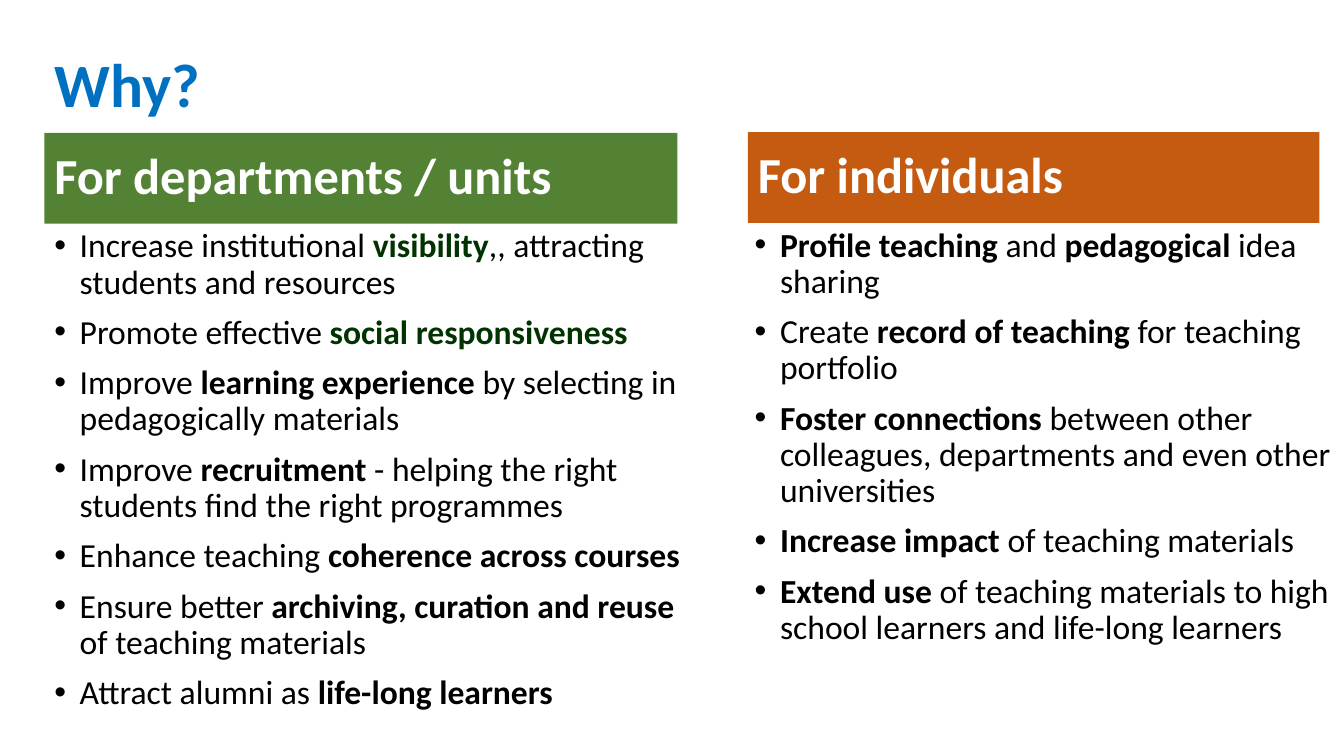
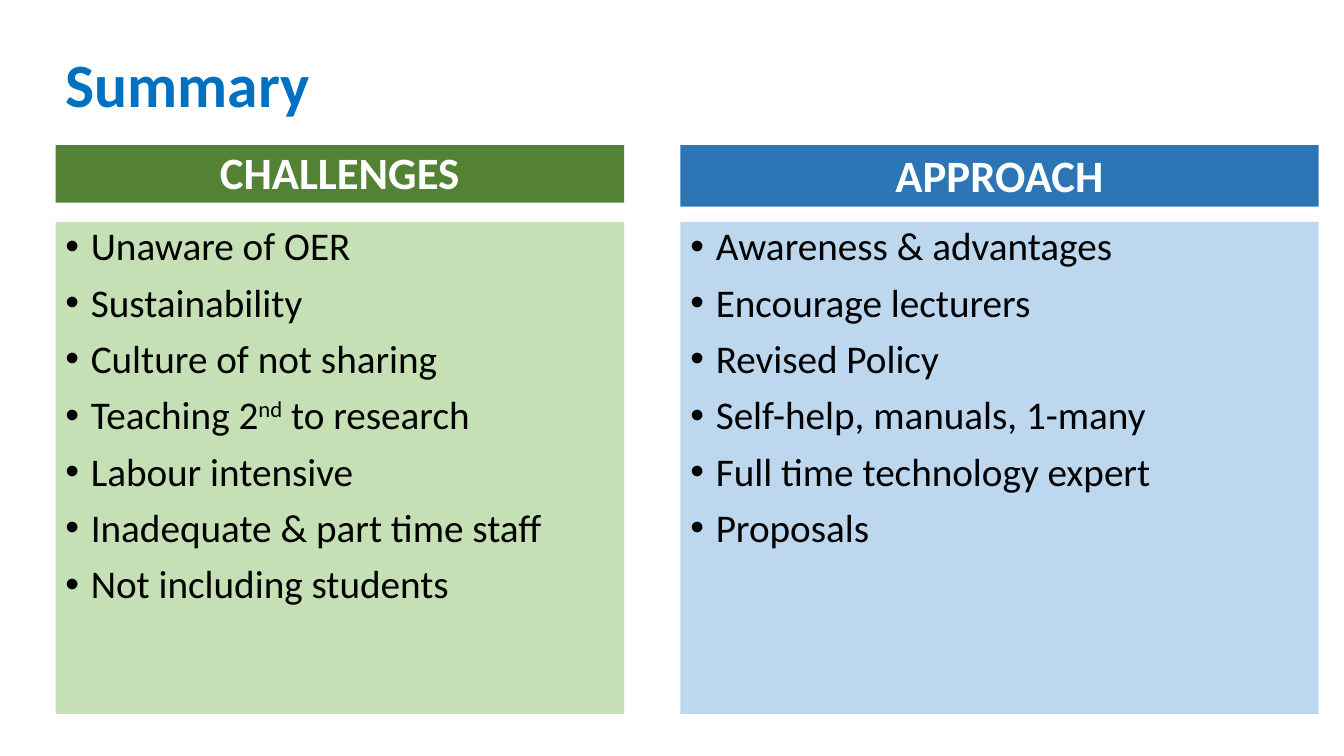
import pptx
import pptx.util
import pptx.dml.color
import pptx.enum.shapes
import pptx.enum.text
import lxml.etree
from pptx.util import Cm

ALIGN = pptx.enum.text.PP_ALIGN
ANCHOR = pptx.enum.text.MSO_ANCHOR
BLACK, WHITE, TITLE_BLUE = "000000", "FFFFFF", "0070C0"
GREEN, ORANGE, BLUE = "548235", "C55A11", "2E75B6"
PALE_GREEN, PALE_BLUE, DARK_GREEN = "C5E0B4", "BDD7EE", "003300"

TITLE = {"size": 44, "color": TITLE_BLUE, "bold": True, "anchor": ANCHOR.MIDDLE, "before": 0}
BAND = {"size": 36, "color": WHITE, "bold": True, "anchor": ANCHOR.MIDDLE}
CENTRED_BAND = {**BAND, "size": 32, "anchor": ANCHOR.BOTTOM, "align": ALIGN.CENTER}
REASONS = {"size": 24, "bullet": True}
POINTS = {"size": 28, "bullet": True}
STRONG = {"bold": True}
STRONG_GREEN = {"bold": True, "color": DARK_GREEN}
RAISED = {"baseline": "30000"}


def rgb(value):
    return pptx.dml.color.RGBColor.from_string(value)


def add_block(slide, left, top, width, height, paragraphs, style, fill=None):
    place = Cm(left), Cm(top), Cm(width), Cm(height)
    if fill:
        block = slide.shapes.add_shape(pptx.enum.shapes.MSO_SHAPE.RECTANGLE, *place)
        block.shadow.inherit = False
        block.fill.solid()
        block.fill.fore_color.rgb = rgb(fill)
        block.line.fill.background()
    else:
        block = slide.shapes.add_textbox(*place)
    frame = block.text_frame
    frame.word_wrap = True
    frame.vertical_anchor = style.get("anchor", ANCHOR.TOP)
    for index, runs in enumerate(paragraphs):
        paragraph = frame.paragraphs[0] if index == 0 else frame.add_paragraph()
        layout = {
            "alignment": style.get("align", ALIGN.LEFT),
            "line_spacing": style.get("spacing", 0.9),
            "space_before": pptx.util.Pt(style.get("before", 10)),
        }
        for key, value in layout.items():
            setattr(paragraph, key, value)
        if style.get("bullet"):
            properties = paragraph._p.get_or_add_pPr()
            properties.set("marL", str(Cm(0.64)))
            properties.set("indent", str(-Cm(0.64)))
            for tag, key, value in (("buFont", "typeface", "Arial"), ("buChar", "char", "•")):
                lxml.etree.SubElement(properties, pptx.oxml.ns.qn("a:" + tag)).set(key, value)
        for text, emphasis in [(run, {}) if isinstance(run, str) else run for run in runs]:
            look = {**style, **emphasis}
            run = paragraph.add_run()
            run.text = text
            font = {"name": "Calibri", "size": pptx.util.Pt(look["size"]), "bold": look.get("bold", False)}
            for key, value in font.items():
                setattr(run.font, key, value)
            run.font.color.rgb = rgb(look.get("color", BLACK))
            if "baseline" in look:
                run._r.get_or_add_rPr().set("baseline", look["baseline"])


deck = pptx.Presentation()
deck.slide_width, deck.slide_height = Cm(33.87), Cm(19.05)
blank = deck.slide_layouts[6]

department_reasons = [
    ["Increase institutional ", ("visibility", STRONG_GREEN), ",, attracting students and resources"],
    ["Promote effective ", ("social responsiveness", STRONG_GREEN)],
    ["Improve ", ("learning experience ", STRONG), "by selecting in pedagogically materials"],
    ["Improve ", ("recruitment", STRONG), " - helping the right students find the right programmes"],
    ["Enhance teaching ", ("coherence across courses", STRONG)],
    ["Ensure better ", ("archiving, curation and reuse", STRONG), " of teaching materials"],
    ["Attract alumni as ", ("life-long learners", STRONG)],
]
individual_reasons = [
    [("Profile teaching ", STRONG), "and", (" pedagogical", STRONG), " idea sharing"],
    ["Create ", ("record of teaching ", STRONG), "for teaching portfolio"],
    [("Foster connections ", STRONG),
     "between other colleagues, departments and even other universities"],
    [("Increase impact ", STRONG), "of teaching materials"],
    [("Extend use ", STRONG), "of teaching materials to high school learners and life-long learners"],
]
why = deck.slides.add_slide(blank)
add_block(why, 1.12, 0.36, 29.21, 3.68, [["Why?"]], TITLE)
for heading, fill, left, top, width, list_left, list_width, reasons in (
    ("For departments / units", GREEN, 1.12, 3.35, 15.95, 1.12, 16.43, department_reasons),
    ("For individuals", ORANGE, 18.85, 3.33, 14.4, 18.77, 16.13, individual_reasons),
):
    add_block(why, left, top, width, 2.29, [[heading]], BAND, fill)
    add_block(why, list_left, top + 2.29, list_width, 13.44, reasons, REASONS)

challenges = [
    ["Unaware of OER"],
    ["Sustainability"],
    ["Culture of not sharing"],
    ["Teaching 2", ("nd", RAISED), " to research"],
    ["Labour intensive"],
    ["Inadequate & part time staff"],
    ["Not including students"],
]
approach = [
    ["Awareness & advantages"],
    ["Encourage lecturers"],
    ["Revised Policy"],
    ["Self-help, manuals, 1-many"],
    ["Full time technology expert"],
    ["Proposals"],
]
summary = deck.slides.add_slide(blank)
add_block(summary, 1.4, 1.02, 30.15, 2.39, [["Summary"]], TITLE)
for heading, fill, pale, left, width, height, spacing, points in (
    ("CHALLENGES", GREEN, PALE_GREEN, 1.4, 14.33, 1.45, 0.8, challenges),
    ("APPROACH", BLUE, PALE_BLUE, 17.15, 16.08, 1.55, 0.9, approach),
):
    add_block(summary, left, 3.66, width, height, [[heading]], {**CENTRED_BAND, "spacing": spacing}, fill)
    add_block(summary, left, 5.59, width, 12.4, points, POINTS, pale)

deck.save("out.pptx")
